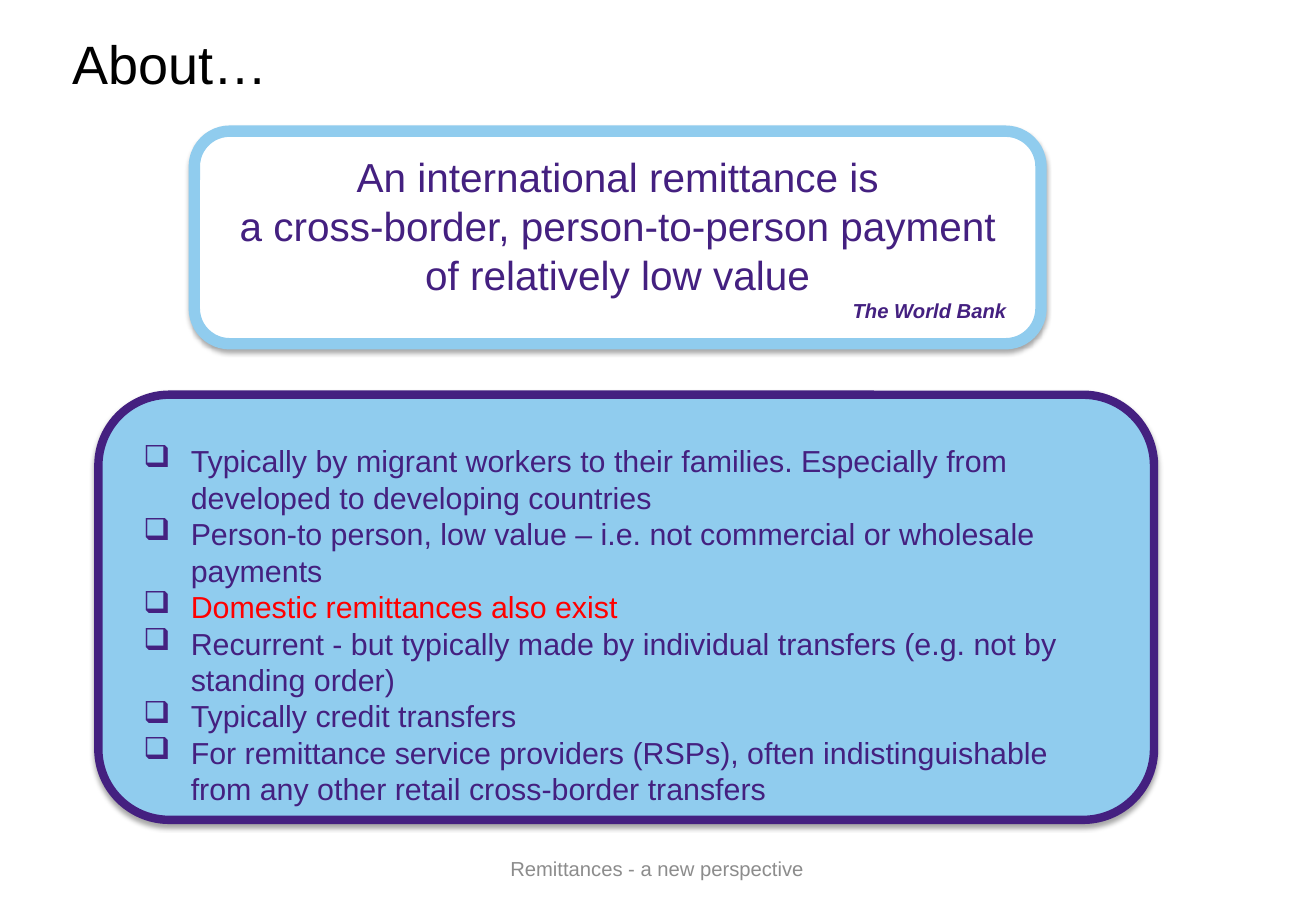
"""Builds a slide that defines international remittances."""
from lxml import etree
from pptx import Presentation
from pptx.dml.color import RGBColor
from pptx.enum.shapes import MSO_SHAPE
from pptx.enum.text import MSO_ANCHOR, PP_ALIGN
from pptx.oxml.ns import qn
from pptx.util import Pt

ROUNDED = MSO_SHAPE.ROUNDED_RECTANGLE
MIDDLE = MSO_ANCHOR.MIDDLE
LEFT, CENTER, RIGHT = PP_ALIGN.LEFT, PP_ALIGN.CENTER, PP_ALIGN.RIGHT

BLACK = RGBColor(0x00, 0x00, 0x00)
WHITE = RGBColor(0xFF, 0xFF, 0xFF)
GREY = RGBColor(0x8C, 0x8C, 0x8C)
PURPLE = RGBColor(0x44, 0x20, 0x80)
SKY = RGBColor(0x90, 0xCC, 0xEE)
RED = RGBColor(0xFF, 0x00, 0x00)

TITLE = "About…"
FOOTER = "Remittances - a new perspective"
DEFINITION = [
    "An international remittance is",
    "a cross-border, person-to-person payment of relatively low value",
]
SOURCE = "The World Bank"
FEATURES = [
    ("Typically by migrant workers to their families. "
     "Especially from developed to developing countries", PURPLE),
    ("Person-to person, low value – i.e. not commercial or wholesale payments", PURPLE),
    ("Domestic remittances also exist", RED),
    ("Recurrent - but typically made by individual transfers "
     "(e.g. not by standing order)", PURPLE),
    ("Typically credit transfers", PURPLE),
    ("For remittance service providers (RSPs), often indistinguishable "
     "from any other retail cross-border transfers", PURPLE),
]

SLIDE_SIZE = (780, 540)
TITLE_BOX = (36, 12.24, 620.64, 50.4)
FOOTER_BOX = (167.04, 500.4, 444.96, 28.8)
FEATURES_BOX = (58.32, 234, 625.68, 252)
DEFINITION_BOX = (115.2, 77.76, 501.84, 126)
PADDING = 14.4
FEATURES_TOP_PADDING = 20.7
BULLET_INDENT = 28.08


def add_bullet(paragraph):
    properties = paragraph._p.get_or_add_pPr()
    properties.set("marL", str(Pt(BULLET_INDENT)))
    properties.set("indent", str(-Pt(BULLET_INDENT)))
    colour = etree.SubElement(properties, qn("a:buClr"))
    etree.SubElement(colour, qn("a:srgbClr"), val=str(PURPLE))
    etree.SubElement(properties, qn("a:buChar"), char="❑")


def write(frame, text, size=18, color=PURPLE, align=LEFT, bold=False,
          italic=False, bullet=False):
    first = frame.paragraphs[0]
    paragraph = frame.add_paragraph() if first.runs else first
    if bullet:
        add_bullet(paragraph)
    paragraph.alignment = align
    run = paragraph.add_run()
    run.text = text
    font = run.font
    font.name, font.size, font.bold, font.italic = "Arial", Pt(size), bold, italic
    font.color.rgb = color


def add_label(slide, box):
    frame = slide.shapes.add_textbox(*map(Pt, box)).text_frame
    frame.word_wrap = True
    frame.vertical_anchor = MIDDLE
    return frame


def add_shadow(panel):
    panel.shadow.inherit = False
    effects = panel._element.spPr.find(qn("a:effectLst"))
    shadow = etree.SubElement(
        effects, qn("a:outerShdw"), blurRad=str(Pt(3.1)), dist=str(Pt(1.8)),
        dir="5400000", rotWithShape="0")
    colour = etree.SubElement(shadow, qn("a:srgbClr"), val=str(BLACK))
    etree.SubElement(colour, qn("a:alpha"), val="35000")


def add_panel(slide, box, fill, border, border_width, top=PADDING, bottom=PADDING):
    panel = slide.shapes.add_shape(ROUNDED, *map(Pt, box))
    panel.fill.solid()
    panel.fill.fore_color.rgb = fill
    panel.line.color.rgb = border
    panel.line.width = Pt(border_width)
    add_shadow(panel)
    frame = panel.text_frame
    frame.word_wrap = True
    frame.vertical_anchor = MIDDLE
    frame.margin_left = frame.margin_right = Pt(PADDING)
    frame.margin_top, frame.margin_bottom = Pt(top), Pt(bottom)
    return frame


def main():
    deck = Presentation()
    deck.slide_width, deck.slide_height = map(Pt, SLIDE_SIZE)
    slide = deck.slides.add_slide(deck.slide_layouts[6])

    write(add_label(slide, TITLE_BOX), TITLE, size=32, color=BLACK)
    write(add_label(slide, FOOTER_BOX), FOOTER, size=12, color=GREY, align=CENTER)

    features = add_panel(slide, FEATURES_BOX, SKY, PURPLE, 5,
                         top=FEATURES_TOP_PADDING, bottom=0)
    for text, color in FEATURES:
        write(features, text, color=color, bullet=True)

    definition = add_panel(slide, DEFINITION_BOX, WHITE, SKY, 6.75)
    for text in DEFINITION:
        write(definition, text, size=24, align=CENTER)
    write(definition, SOURCE, size=12, align=RIGHT, bold=True, italic=True)

    deck.save("out.pptx")


if __name__ == "__main__":
    main()
